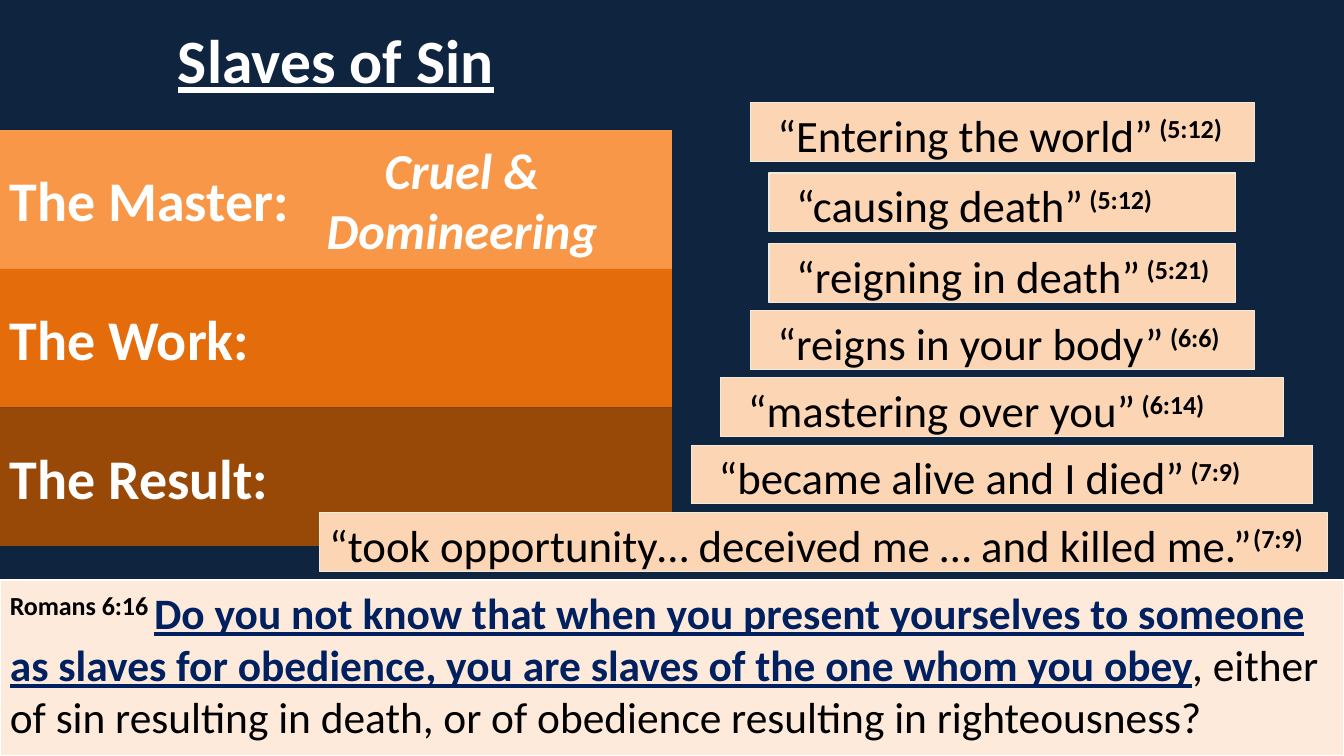
from dataclasses import dataclass

from pptx import Presentation
from pptx.dml.color import RGBColor
from pptx.enum.shapes import MSO_SHAPE
from pptx.enum.text import MSO_ANCHOR, PP_ALIGN
from pptx.util import Inches, Pt

RECT = MSO_SHAPE.RECTANGLE
TOP, MIDDLE = MSO_ANCHOR.TOP, MSO_ANCHOR.MIDDLE
LEFT, CENTER = PP_ALIGN.LEFT, PP_ALIGN.CENTER

WIDE, HIGH = Inches(13.33), Inches(7.5)
COLS, ROWS = 160, 90
HALF = COLS / 2
AXIS = 119.3  # column on which the quotes are centred

COLORS = {
    "back": "0F243E", "white": "FFFFFF", "black": "000000", "navy": "002060",
    "verse": "FDEADA", "quote": "FCD5B5", "edge": "EEECE1",
}


@dataclass
class Box:
    col: float
    row: float
    cols: float
    rows: float


@dataclass
class Bar:
    label: str
    fill: str


@dataclass
class Quote:
    text: str
    ref: str
    row: float
    cols: float
    mid: float = AXIS
    inset: float = 0.27


BARS = [
    Bar("The Master:", "F79747"),
    Bar("The Work:", "E46C0A"),
    Bar("The Result:", "984807"),
]

QUOTES = [
    Quote("“Entering the world”", " (5:12)", 12.2, 60),
    Quote("“causing death”", " (5:12)", 20.6, 55.5),
    Quote("“reigning in death”", " (5:21)", 29, 55.5),
    Quote("“reigns in your body”", " (6:6)", 37, 60),
    Quote("“mastering over you”", " (6:14)", 45, 67),
    Quote("“became alive and I died”", " (7:9)", 53, 74),
    Quote("“took opportunity… deceived me … and killed me.”", "(7:9)",
          61, 120, mid=98, inset=0.1),
]


def rgb(code: str) -> RGBColor:
    return RGBColor.from_string(code)


def place(box: Box) -> tuple[int, int, int, int]:
    """Turn grid columns and rows into slide lengths."""
    return (int(WIDE * box.col / COLS), int(HIGH * box.row / ROWS),
            int(WIDE * box.cols / COLS), int(HIGH * box.rows / ROWS))


def write(para, text: str, *, size: float, color: str = "black",
          bold: bool = False, italic: bool = False, under: bool = False,
          raised: bool = False) -> None:
    run = para.add_run()
    run.text = text
    font = run.font
    font.name, font.size = "Calibri", Pt(size)
    font.bold, font.italic, font.underline = bold, italic, under
    font.color.rgb = rgb(COLORS[color])
    if raised:
        run._r.get_or_add_rPr().set("baseline", "30000")


def frame(shape, anchor=TOP, align=LEFT, inset: float = 0.1):
    """Set up the text frame and return its first paragraph."""
    text = shape.text_frame
    text.word_wrap = True
    text.vertical_anchor = anchor
    text.margin_left = Inches(inset)
    para = text.paragraphs[0]
    para.alignment = align
    para.space_before = Pt(0)
    return para


def panel(slide, box: Box, fill: str, line: str = "", width: float = 0):
    shape = slide.shapes.add_shape(RECT, *place(box))
    shape.shadow.inherit = False
    shape.fill.solid()
    shape.fill.fore_color.rgb = rgb(fill)
    if line:
        shape.line.color.rgb = rgb(line)
        shape.line.width = Pt(width)
    else:
        shape.line.fill.background()
    return shape


def draw_title(slide) -> None:
    title = slide.shapes.title
    title.left, title.top, title.width, title.height = place(
        Box(0, 2, HALF, 13))
    write(frame(title, align=CENTER), "Slaves of Sin",
          size=44, color="white", bold=True, under=True)


def draw_bars(slide) -> None:
    for i, bar in enumerate(BARS):
        shape = panel(slide, Box(0, 15.5 + 16.5 * i, HALF, 16.5), bar.fill)
        write(frame(shape, MIDDLE), bar.label,
              size=40, color="white", bold=True)


def draw_verse(slide) -> None:
    shape = panel(slide, Box(0, 69, COLS, 21), COLORS["verse"],
                  COLORS["white"], 1.5)
    para = frame(shape)
    write(para, "Romans 6:16 ", size=32, bold=True, raised=True)
    write(para, "Do you not know that when you present yourselves to someone "
          "as slaves for obedience, you are slaves of the one whom you obey",
          size=31, color="navy", bold=True, under=True)
    write(para, ", either of sin resulting in death, or of obedience "
          "resulting in righteousness?", size=31)


def draw_trait(slide) -> None:
    shape = slide.shapes.add_textbox(*place(Box(35, 16, 40, 15.5)))
    write(frame(shape, MIDDLE, CENTER), "Cruel & Domineering",
          size=36, color="white", bold=True, italic=True)


def draw_quotes(slide) -> None:
    for quote in QUOTES:
        box = Box(quote.mid - quote.cols / 2, quote.row, quote.cols, 7)
        shape = panel(slide, box, COLORS["quote"], COLORS["edge"], 0.75)
        para = frame(shape, inset=quote.inset)
        write(para, quote.text, size=32)
        write(para, quote.ref, size=32, bold=True, raised=True)


def main() -> None:
    deck = Presentation()
    deck.slide_width, deck.slide_height = WIDE, HIGH
    slide = deck.slides.add_slide(deck.slide_layouts[5])
    slide.background.fill.solid()
    slide.background.fill.fore_color.rgb = rgb(COLORS["back"])
    draw_title(slide)
    draw_bars(slide)
    draw_verse(slide)
    draw_trait(slide)
    draw_quotes(slide)
    deck.save("out.pptx")


if __name__ == "__main__":
    main()
